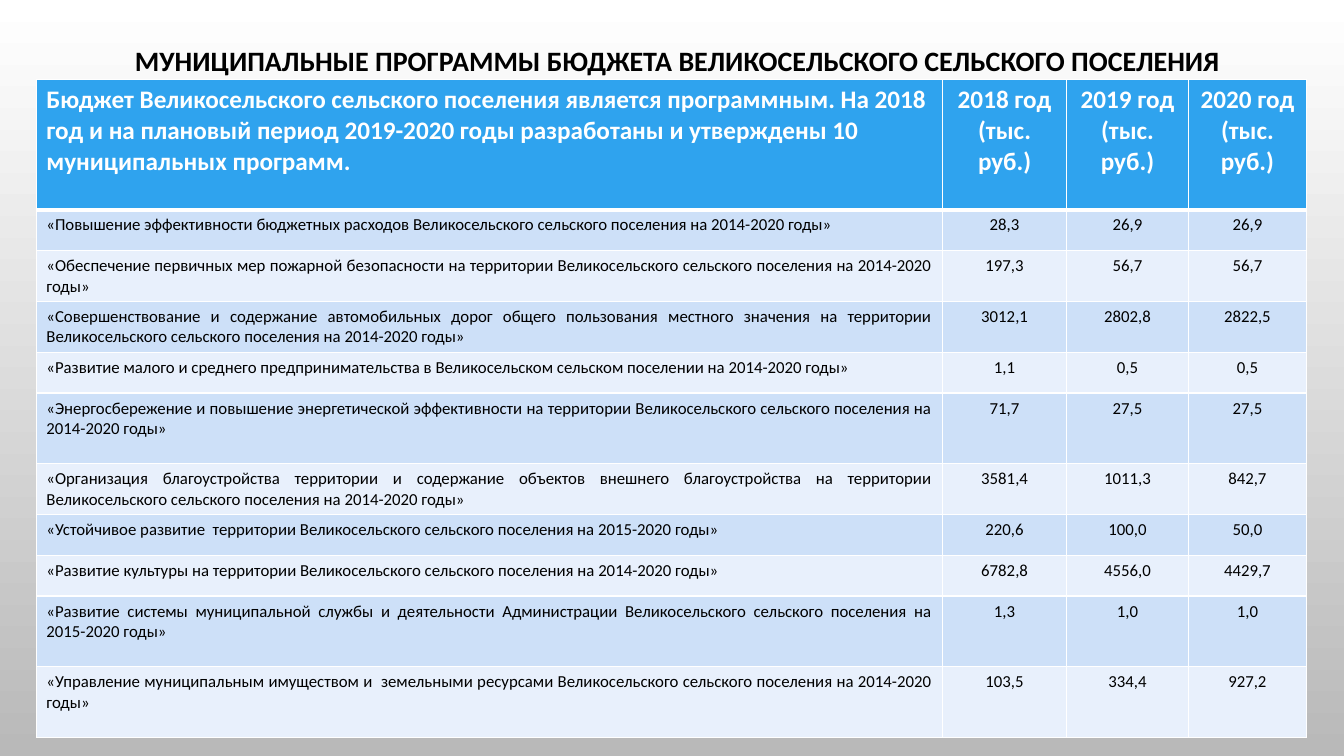
import pptx
import pptx.util
import pptx.dml.color
import pptx.enum.text
import pptx.oxml
import pptx.oxml.ns

Pt = pptx.util.Pt
ALIGN = pptx.enum.text.PP_ALIGN
FONT = "Calibri"
WHITE, BLACK, HEADER_BLUE = "FFFFFF", "000000", "2FA3EE"
BANDS = ("CDE0F8", "E8F0FC")

TITLE = "МУНИЦИПАЛЬНЫЕ ПРОГРАММЫ БЮДЖЕТА ВЕЛИКОСЕЛЬСКОГО СЕЛЬСКОГО ПОСЕЛЕНИЯ"
HEADER = (
    "Бюджет Великосельского сельского поселения является программным. На 2018  год "
    "и на плановый период 2019-2020 годы разработаны и утверждены 10 муниципальных программ.",
    *(f"{year} год (тыс. руб.)" for year in (2018, 2019, 2020)),
)
COL_WIDTHS = (647.3, 88.6, 87.1, 84.2)
HEADER_HEIGHT = 93
LOW, MID, HIGH = 29.2, 36.2, 50.4

# Row height, programme, amounts for 2018, 2019 and 2020
PROGRAMMES = (
    (LOW, "«Повышение эффективности бюджетных расходов Великосельского сельского "
     "поселения на 2014-2020 годы»", "28,3", "26,9", "26,9"),
    (MID, "«Обеспечение первичных мер пожарной безопасности на территории Великосельского "
     "сельского поселения на 2014-2020 годы»", "197,3", "56,7", "56,7"),
    (MID, "«Совершенствование и содержание автомобильных дорог общего пользования местного "
     "значения на территории Великосельского сельского поселения на 2014-2020 годы»",
     "3012,1", "2802,8", "2822,5"),
    (LOW, "«Развитие малого и среднего предпринимательства в Великосельском сельском "
     "поселении на 2014-2020 годы»", "1,1", "0,5", "0,5"),
    (HIGH, "«Энергосбережение и повышение энергетической эффективности на территории "
     "Великосельского сельского поселения на 2014-2020 годы»", "71,7", "27,5", "27,5"),
    (MID, "«Организация благоустройства территории и содержание объектов внешнего "
     "благоустройства на территории Великосельского сельского поселения на 2014-2020 годы»",
     "3581,4", "1011,3", "842,7"),
    (LOW, "«Устойчивое развитие  территории Великосельского сельского поселения "
     "на 2015-2020 годы»", "220,6", "100,0", "50,0"),
    (LOW, "«Развитие культуры на территории Великосельского сельского поселения "
     "на 2014-2020 годы»", "6782,8", "4556,0", "4429,7"),
    (HIGH, "«Развитие системы муниципальной службы и деятельности Администрации "
     "Великосельского сельского поселения на 2015-2020 годы»", "1,3", "1,0", "1,0"),
    (HIGH, "«Управление муниципальным имуществом и  земельными ресурсами Великосельского "
     "сельского поселения на 2014-2020 годы»", "103,5", "334,4", "927,2"),
)


def rgb(value):
    return pptx.dml.color.RGBColor.from_string(value)


def set_text(tf, text, size, color, bold, align):
    tf.text = text
    p = tf.paragraphs[0]
    p.alignment = align
    font = p.runs[0].font
    font.name, font.size, font.bold = FONT, Pt(size), bold
    font.color.rgb = rgb(color)


def set_borders(cell, top=1, bottom=1):
    tc_pr = cell._tc.get_or_add_tcPr()
    for side, width in (("L", 1), ("R", 1), ("T", top), ("B", bottom)):
        tc_pr.append(pptx.oxml.parse_xml(
            f'<a:ln{side} {pptx.oxml.ns.nsdecls("a")} w="{Pt(width)}">'
            f'<a:solidFill><a:srgbClr val="{WHITE}"/></a:solidFill></a:ln{side}>'))


def add_background(s):
    fill = s.background.fill
    fill.gradient()
    fill.gradient_angle = 270
    for stop, color in zip(fill.gradient_stops, (WHITE, "B9B9B9")):
        stop.color.rgb = rgb(color)


def add_title(s, left, top, width, height):
    tf = s.shapes.add_textbox(Pt(left), Pt(top), Pt(width), Pt(height)).text_frame
    tf.word_wrap = True
    set_text(tf, TITLE, 20, BLACK, True, ALIGN.CENTER)


def add_programme_table(s, left, top, width, height):
    table = s.shapes.add_table(len(PROGRAMMES) + 1, len(COL_WIDTHS),
                               Pt(left), Pt(top), Pt(width), Pt(height)).table
    for column, col_width in zip(table.columns, COL_WIDTHS):
        column.width = Pt(col_width)

    # Header row
    table.rows[0].height = Pt(HEADER_HEIGHT)
    for j, text in enumerate(HEADER):
        cell = table.cell(0, j)
        set_text(cell.text_frame, text, 18, WHITE, True, ALIGN.CENTER if j else ALIGN.LEFT)
        set_borders(cell, bottom=3)
        cell.fill.solid()
        cell.fill.fore_color.rgb = rgb(HEADER_BLUE)

    # Programme rows
    for i, (row_height, *texts) in enumerate(PROGRAMMES, 1):
        table.rows[i].height = Pt(row_height)
        for j, text in enumerate(texts):
            cell = table.cell(i, j)
            set_text(cell.text_frame, text, 12, BLACK, False,
                     ALIGN.CENTER if j else ALIGN.JUSTIFY)
            set_borders(cell, top=3 if i == 1 else 1)
            cell.fill.solid()
            cell.fill.fore_color.rgb = rgb(BANDS[(i - 1) % 2])


def main():
    prs = pptx.Presentation()
    prs.slide_width, prs.slide_height = Pt(960), Pt(540)
    s = prs.slides.add_slide(prs.slide_layouts[6])
    add_background(s)
    add_title(s, 34.6, 27.4, 898.6, 31.7)
    add_programme_table(s, 26, 57, sum(COL_WIDTHS),
                        HEADER_HEIGHT + sum(row[0] for row in PROGRAMMES))
    prs.save("out.pptx")


if __name__ == "__main__":
    main()
